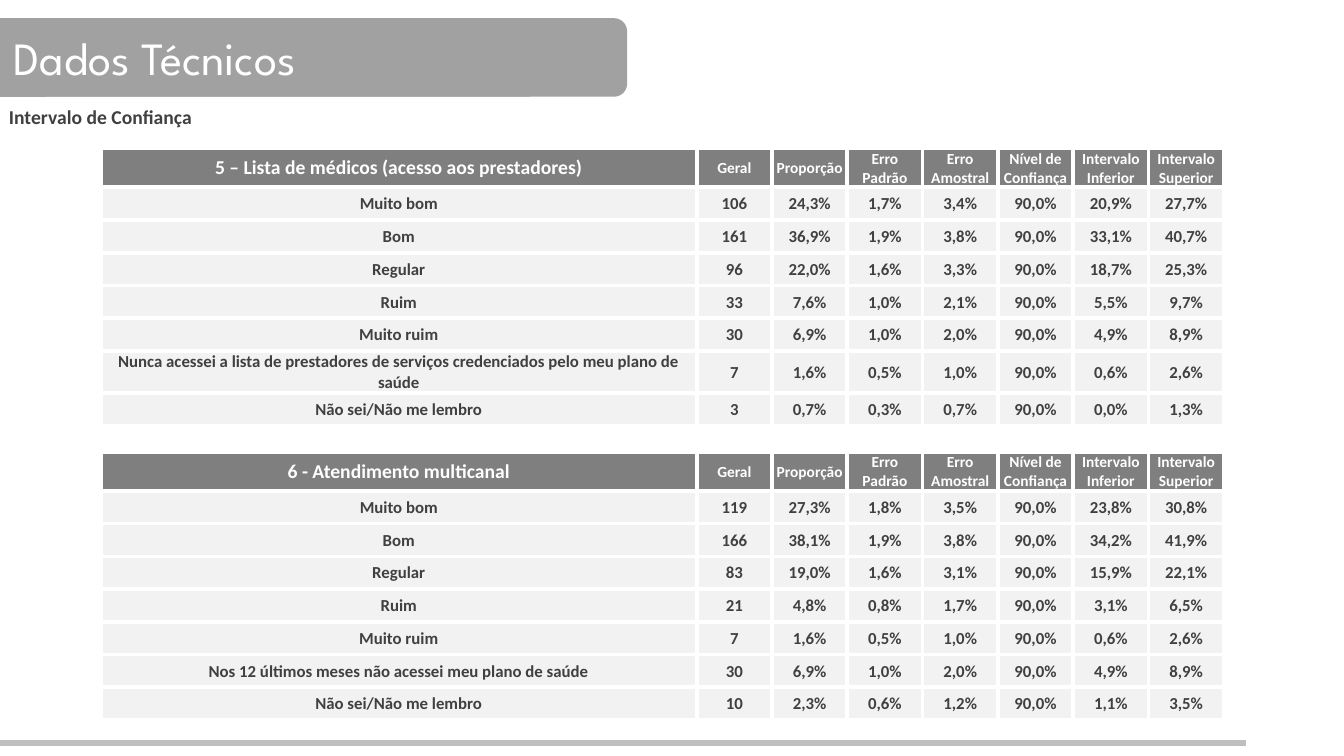
from pptx import Presentation
from pptx.dml.color import RGBColor
from pptx.enum.shapes import MSO_CONNECTOR, MSO_SHAPE
from pptx.enum.text import MSO_ANCHOR, MSO_AUTO_SIZE, PP_ALIGN
from pptx.oxml.ns import qn
from pptx.util import Inches, Pt
from lxml import etree

ROUNDED = MSO_SHAPE.ROUNDED_RECTANGLE
STRAIGHT = MSO_CONNECTOR.STRAIGHT
MIDDLE = MSO_ANCHOR.MIDDLE
CENTER, LEFT = PP_ALIGN.CENTER, PP_ALIGN.LEFT
FIT_SHAPE = MSO_AUTO_SIZE.SHAPE_TO_FIT_TEXT

WHITE, DARK = "FFFFFF", "404040"
BANNER_GRAY, HEADER_GRAY, ROW_GRAY, RULE_GRAY = "A1A1A1", "7F7F7F", "F2F2F2", "BFBFBF"

# Table geometry in inches
TABLE_LEFT, TABLE_TOP, TABLE_WIDTH, TABLE_HEIGHT = 1, 1.47, 11.14, 5.64
LABEL_WIDTH = 5.91
HEADER_HEIGHT, TALL_HEIGHT, SPACER_HEIGHT = 0.35, 0.38, 0.26
ROW_HEIGHT = 1.3 / 4
LONG_LABEL = 60

MEASURES = ["Geral", "Proporção", "Erro Padrão", "Erro Amostral",
            "Nível de Confiança", "Intervalo Inferior", "Intervalo Superior"]

DOCTOR_LIST = ("5 – Lista de médicos (acesso aos prestadores)", [
    ("Muito bom", "106 24,3% 1,7% 3,4% 90,0% 20,9% 27,7%"),
    ("Bom", "161 36,9% 1,9% 3,8% 90,0% 33,1% 40,7%"),
    ("Regular", "96 22,0% 1,6% 3,3% 90,0% 18,7% 25,3%"),
    ("Ruim", "33 7,6% 1,0% 2,1% 90,0% 5,5% 9,7%"),
    ("Muito ruim", "30 6,9% 1,0% 2,0% 90,0% 4,9% 8,9%"),
    ("Nunca acessei a lista de prestadores de serviços credenciados pelo meu plano de saúde",
     "7 1,6% 0,5% 1,0% 90,0% 0,6% 2,6%"),
    ("Não sei/Não me lembro", "3 0,7% 0,3% 0,7% 90,0% 0,0% 1,3%"),
])

MULTICHANNEL = ("6 - Atendimento multicanal", [
    ("Muito bom", "119 27,3% 1,8% 3,5% 90,0% 23,8% 30,8%"),
    ("Bom", "166 38,1% 1,9% 3,8% 90,0% 34,2% 41,9%"),
    ("Regular", "83 19,0% 1,6% 3,1% 90,0% 15,9% 22,1%"),
    ("Ruim", "21 4,8% 0,8% 1,7% 90,0% 3,1% 6,5%"),
    ("Muito ruim", "7 1,6% 0,5% 1,0% 90,0% 0,6% 2,6%"),
    ("Nos 12 últimos meses não acessei meu plano de saúde",
     "30 6,9% 1,0% 2,0% 90,0% 4,9% 8,9%"),
    ("Não sei/Não me lembro", "10 2,3% 0,6% 1,2% 90,0% 1,1% 3,5%"),
])


def color(value):
    return RGBColor.from_string(value)


def write_text(text_frame, text, size, text_color, font="Calibri", bold=True, align=LEFT):
    text_frame.text = text
    paragraph = text_frame.paragraphs[0]
    paragraph.alignment = align
    for run in paragraph.runs:
        run.font.name = font
        run.font.size = Pt(size)
        run.font.bold = bold
        run.font.color.rgb = color(text_color)


def add_banner(slide, left, width, title=""):
    shape = slide.shapes.add_shape(ROUNDED, Inches(left), Inches(0.18),
                                   Inches(width), Inches(0.78))
    shape.shadow.inherit = False
    shape.fill.solid()
    shape.fill.fore_color.rgb = color(BANNER_GRAY)
    shape.line.fill.background()
    if title:
        shape.text_frame.vertical_anchor = MIDDLE
        write_text(shape.text_frame, title, 33, WHITE, "League Spartan", False)


def add_footer_rule(slide):
    rule = slide.shapes.add_connector(STRAIGHT, 0, Inches(7.37), Inches(12.36), Inches(7.37))
    rule.line.color.rgb = color(RULE_GRAY)
    rule.line.width = Pt(4.5)
    etree.SubElement(rule._element.spPr, qn("a:effectLst"))


def add_subtitle(slide, text):
    box = slide.shapes.add_textbox(Inches(-0.01), Inches(0.99), Inches(2.03), Inches(0.34))
    box.text_frame.word_wrap = False
    box.text_frame.auto_size = FIT_SHAPE
    write_text(box.text_frame, text, 14, DARK)


def set_borders(cell):
    """Put a white 3 pt border on each side, ahead of the cell fill."""
    properties = cell._tc.get_or_add_tcPr()
    for position, side in enumerate(("a:lnL", "a:lnR", "a:lnT", "a:lnB")):
        border = etree.Element(qn(side), w=str(Pt(3)))
        fill = etree.SubElement(border, qn("a:solidFill"))
        etree.SubElement(fill, qn("a:srgbClr"), val=WHITE)
        properties.insert(position, border)


def fill_cell(cell, text, size, text_color, fill_color):
    cell.margin_left = cell.margin_right = cell.margin_top = Inches(0.01)
    cell.margin_bottom = 0
    cell.vertical_anchor = MIDDLE
    if text:
        cell.fill.solid()
        cell.fill.fore_color.rgb = color(fill_color)
        write_text(cell.text_frame, text, size, text_color, align=CENTER)
    else:
        cell.fill.background()
        paragraph = cell.text_frame.paragraphs[0]
        etree.SubElement(paragraph._p, qn("a:endParaRPr"), sz=str(size * 100))
    set_borders(cell)


def survey_rows(survey):
    """Give height, texts, label size, value size, text colour and fill of each row."""
    title, answers = survey
    rows = [(HEADER_HEIGHT, [title] + MEASURES, 14, 11, WHITE, HEADER_GRAY)]
    for label, values in answers:
        height = TALL_HEIGHT if len(label) > LONG_LABEL else ROW_HEIGHT
        rows.append((height, [label] + values.split(), 12, 12, DARK, ROW_GRAY))
    return rows


def add_survey_table(slide):
    spacer = (SPACER_HEIGHT, [""] * (len(MEASURES) + 1), 12, 12, DARK, WHITE)
    rows = survey_rows(DOCTOR_LIST) + [spacer] + survey_rows(MULTICHANNEL)
    table = slide.shapes.add_table(
        len(rows), len(MEASURES) + 1, Inches(TABLE_LEFT), Inches(TABLE_TOP),
        Inches(TABLE_WIDTH), Inches(TABLE_HEIGHT)).table
    table.first_row = table.horz_banding = False

    for index, column in enumerate(table.columns):
        measure_width = (TABLE_WIDTH - LABEL_WIDTH) / len(MEASURES)
        column.width = Inches(measure_width if index else LABEL_WIDTH)

    for row, (height, texts, label_size, value_size, text_color, fill_color) in zip(table.rows, rows):
        row.height = Inches(height)
        for index, (cell, text) in enumerate(zip(row.cells, texts)):
            fill_cell(cell, text, value_size if index else label_size, text_color, fill_color)


def main():
    presentation = Presentation()
    presentation.slide_width = Inches(13.33)
    presentation.slide_height = Inches(7.5)
    slide = presentation.slides.add_slide(presentation.slide_layouts[6])

    # Title banner and footer
    add_banner(slide, -0.27, 6.49)
    add_footer_rule(slide)
    add_banner(slide, 0, 5.36, "Dados Técnicos")

    # Confidence intervals
    add_survey_table(slide)
    add_subtitle(slide, "Intervalo de Confiança")

    presentation.save("out.pptx")


if __name__ == "__main__":
    main()
